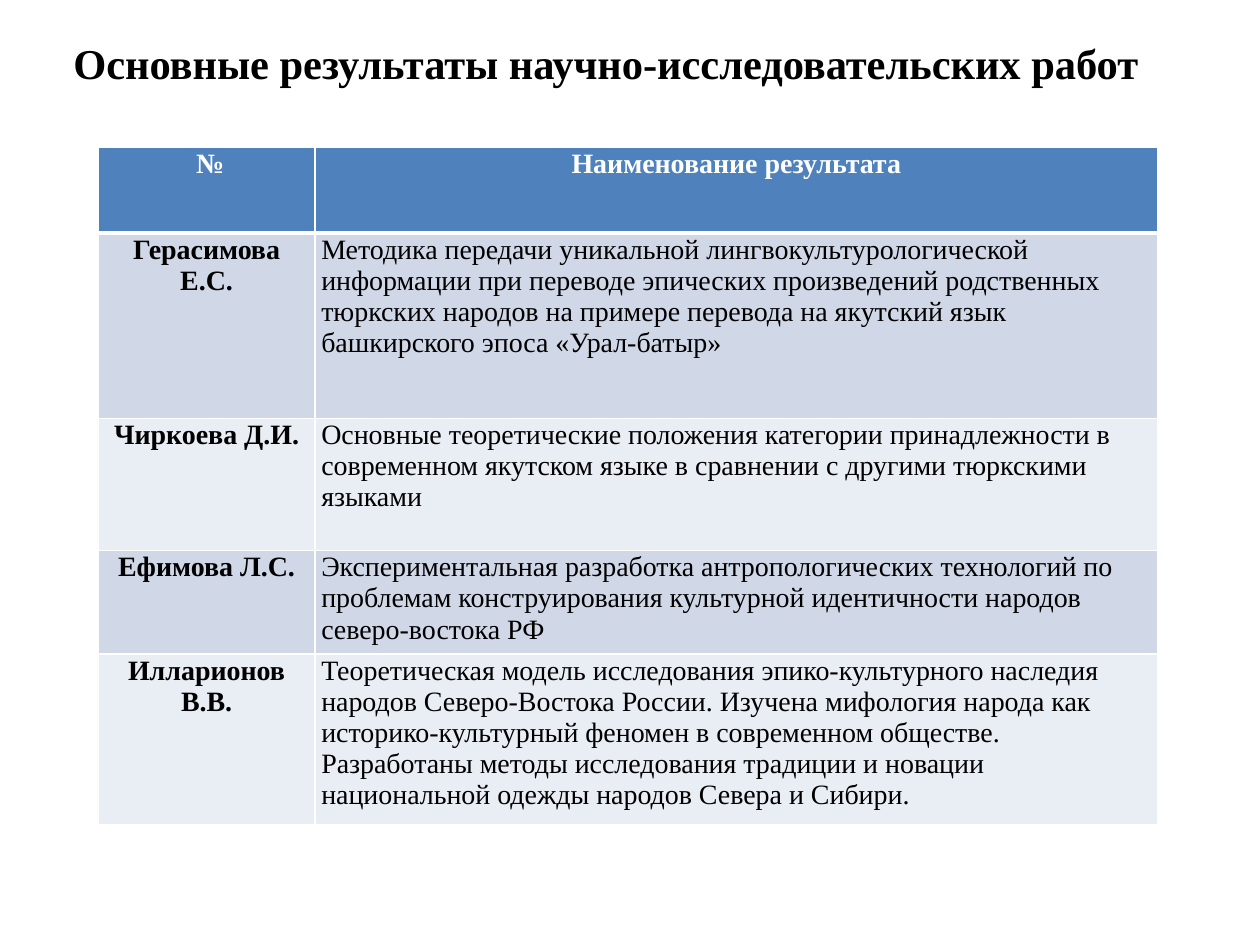
"""Build a slide with a table of the main research results."""
from dataclasses import dataclass

from lxml.etree import SubElement
from pptx import Presentation
from pptx.dml.color import RGBColor
from pptx.enum.text import MSO_ANCHOR as Anchor, PP_ALIGN as Align
from pptx.oxml.ns import qn
from pptx.util import Inches, Pt

COLORS = {
    "black": "000000",
    "white": "FFFFFF",
    "header": "4F81BD",
    "band_dark": "D0D8E8",
    "band_light": "E9EDF4",
}
FONT = "Times New Roman"
COLUMN_WIDTHS = (1.72, 6.69)


@dataclass
class ResultRow:
    author: str
    result: str
    height: float


HEADER = ResultRow(" №", "Наименование результата", 0.68)
RESULTS = [
    ResultRow(
        "Герасимова Е.С.",
        "Методика передачи уникальной лингвокультурологической информации при "
        "переводе эпических произведений родственных тюркских народов на примере "
        "перевода на якутский язык башкирского эпоса «Урал-батыр»",
        1.47,
    ),
    ResultRow(
        "Чиркоева Д.И.",
        "Основные теоретические положения категории принадлежности в современном "
        "якутском языке в сравнении с другими тюркскими языками",
        1.05,
    ),
    ResultRow(
        "Ефимова Л.С.",
        "Экспериментальная разработка антропологических технологий по проблемам "
        "конструирования культурной идентичности народов северо-востока РФ",
        0.69,
    ),
    ResultRow(
        "Илларионов В.В.",
        "Теоретическая модель исследования эпико-культурного наследия народов "
        "Северо-Востока России. Изучена мифология народа как историко-культурный "
        "феномен в современном обществе. Разработаны методы исследования традиции "
        "и новации национальной одежды народов Севера и Сибири.",
        0.69,
    ),
]


def write(para, text: str, size: float, color: str, bold: bool, align) -> None:
    para.text = text
    para.alignment = align
    font = para.font
    font.name, font.size, font.bold = FONT, Pt(size), bold
    font.color.rgb = RGBColor.from_string(COLORS[color])


def add_borders(cell, top: float, bottom: float) -> None:
    properties = cell._tc.get_or_add_tcPr()
    for side, width in {"L": 1, "R": 1, "T": top, "B": bottom}.items():
        line = SubElement(properties, qn(f"a:ln{side}"), w=str(Pt(width)))
        fill = SubElement(line, qn("a:solidFill"))
        SubElement(fill, qn("a:srgbClr"), val=COLORS["white"])


def fill_cell(cell, text: str, row: int, column: int) -> None:
    is_header = row == 0
    add_borders(cell, 3 if row == 1 else 1, 3 if is_header else 1)
    fill = "header" if is_header else "band_dark" if row % 2 else "band_light"
    cell.fill.solid()
    cell.fill.fore_color.rgb = RGBColor.from_string(COLORS[fill])
    cell.margin_left = cell.margin_right = Inches(0.05)
    cell.margin_top = cell.margin_bottom = Inches(0.01)
    emphasized = is_header or column == 0
    write(
        cell.text_frame.paragraphs[0], text, 16,
        "white" if is_header else "black",
        emphasized, Align.CENTER if emphasized else Align.LEFT,
    )


def add_title(page) -> None:
    box = page.shapes.add_textbox(Inches(0.31), Inches(0.29), Inches(9), Inches(0.78))
    frame = box.text_frame
    frame.word_wrap = True
    frame.vertical_anchor = Anchor.TOP
    frame.margin_top = 0
    write(
        frame.paragraphs[0], "Основные результаты научно-исследовательских работ",
        24.3, "black", True, Align.CENTER,
    )


def add_results(page, rows: list[ResultRow]) -> None:
    table = page.shapes.add_table(
        len(rows), len(COLUMN_WIDTHS), Inches(0.78), Inches(1.17),
        Inches(sum(COLUMN_WIDTHS)), Inches(sum(row.height for row in rows)),
    ).table
    for column, width in zip(table.columns, COLUMN_WIDTHS):
        column.width = Inches(width)
    for index, row in enumerate(rows):
        table.rows[index].height = Inches(row.height)
        for column, text in enumerate((row.author, row.result)):
            fill_cell(table.cell(index, column), text, index, column)


def main() -> None:
    deck = Presentation()
    deck.slide_width, deck.slide_height = Inches(10), Inches(7.5)
    page = deck.slides.add_slide(deck.slide_layouts[6])
    add_title(page)
    add_results(page, [HEADER, *RESULTS])
    deck.save("out.pptx")


if __name__ == "__main__":
    main()
